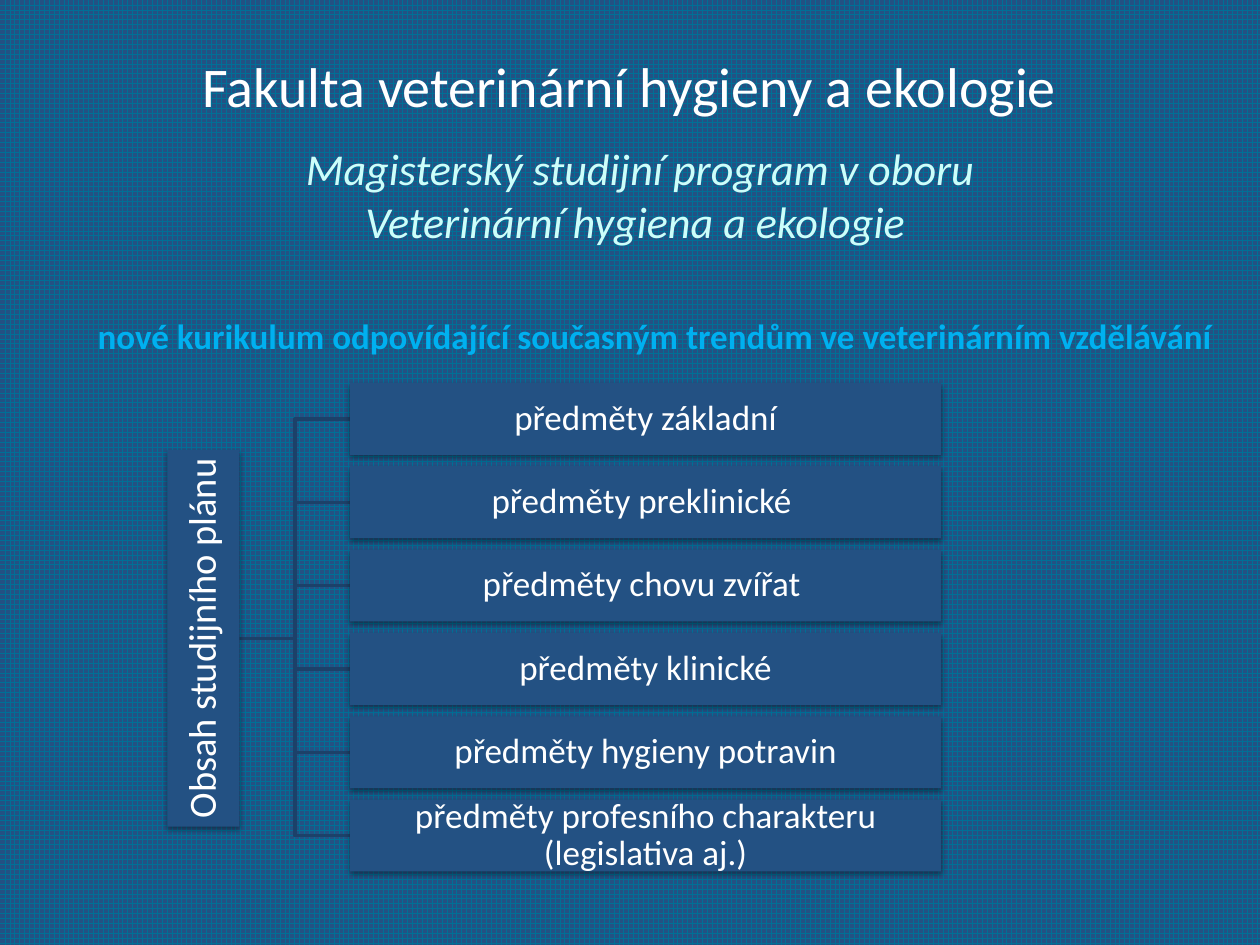
from dataclasses import dataclass

from lxml import etree
from pptx import Presentation
from pptx.dml.color import RGBColor
from pptx.enum.dml import MSO_PATTERN
from pptx.enum.shapes import MSO_SHAPE
from pptx.enum.text import MSO_ANCHOR, PP_ALIGN
from pptx.oxml.ns import qn
from pptx.util import Cm, Pt

LARGE_GRID = MSO_PATTERN.LARGE_GRID
RECTANGLE = MSO_SHAPE.RECTANGLE
TOP, MIDDLE = MSO_ANCHOR.TOP, MSO_ANCHOR.MIDDLE
CENTER = PP_ALIGN.CENTER

HEADING = "Fakulta veterinární hygieny a ekologie"
TITLE = "Magisterský studijní program v oboru\vVeterinární hygiena a ekologie "
SUBHEADING = "nové kurikulum odpovídající současným trendům ve veterinárním vzdělávání"
ROOT = "Obsah studijního plánu"
SUBJECTS = [
    "předměty základní",
    "předměty preklinické ",
    "předměty chovu zvířat ",
    "předměty klinické",
    "předměty hygieny potravin",
    "předměty profesního charakteru (legislativa aj.)",
]

BOX_LEFT, BOX_TOP, BOX_WIDTH, BOX_HEIGHT, BOX_PITCH = 7.06, 7.72, 11.91, 1.45, 1.68
ROOT_CENTER_X, ROOT_CENTER_Y, ROOT_LENGTH = 4.1, 12.87, 7.59


@dataclass(frozen=True)
class Theme:
    """Colours, font and type sizes of the slide."""

    font: str = "Calibri"
    box: RGBColor = RGBColor(0x23, 0x51, 0x83)
    grid: RGBColor = RGBColor(0x00, 0x6F, 0x96)
    branch: RGBColor = RGBColor(0x1C, 0x41, 0x69)
    white: RGBColor = RGBColor(0xFF, 0xFF, 0xFF)
    mint: RGBColor = RGBColor(0xCC, 0xFE, 0xFA)
    sky: RGBColor = RGBColor(0x00, 0xB0, 0xF0)
    heading: float = 32
    title: float = 25.2
    root: float = 22
    body: float = 20


THEME = Theme()


def place(shape, left, top, width, height):
    shape.left, shape.top = Cm(left), Cm(top)
    shape.width, shape.height = Cm(width), Cm(height)


def write(shape, text, size, color, anchor=TOP, bold=False, italic=False):
    frame = shape.text_frame
    frame.text = text
    frame.word_wrap = True
    frame.vertical_anchor = anchor
    paragraph = frame.paragraphs[0]
    paragraph.alignment = CENTER
    font = paragraph.font
    font.name, font.size, font.color.rgb = THEME.font, Pt(size), color
    font.bold, font.italic = bold, italic
    return paragraph


def add_text(slide, box, *args, **options):
    textbox = slide.shapes.add_textbox(*map(Cm, box))
    return write(textbox, *args, **options)


def add_shadow(shape):
    shape.shadow.inherit = False
    effects = shape._element.spPr.find(qn("a:effectLst"))
    shadow = etree.SubElement(effects, qn("a:outerShdw"), blurRad=str(Pt(3.1)),
                              dist=str(Pt(1.6)), dir="5400000", rotWithShape="0")
    color = etree.SubElement(shadow, qn("a:srgbClr"), val="000000")
    etree.SubElement(color, qn("a:alpha"), val="38000")


def add_box(slide, left, top, width, text, size, margin):
    box = slide.shapes.add_shape(RECTANGLE, Cm(left), Cm(top), Cm(width), Cm(BOX_HEIGHT))
    box.fill.solid()
    box.fill.fore_color.rgb = THEME.box
    box.line.fill.background()
    add_shadow(box)
    write(box, text, size, THEME.white, MIDDLE).line_spacing = 0.9
    frame = box.text_frame
    frame.margin_left = frame.margin_right = Cm(margin)
    frame.margin_top = frame.margin_bottom = Cm(margin)
    return box


def add_branch(slide, start_x, end_x, start_y, end_y):
    middle_x = (start_x + end_x) / 2
    builder = slide.shapes.build_freeform(Cm(start_x), Cm(start_y))
    corners = [(middle_x, start_y), (middle_x, end_y), (end_x, end_y)]
    builder.add_line_segments([(Cm(x), Cm(y)) for x, y in corners], close=False)
    branch = builder.convert_to_shape()
    branch.fill.background()
    branch.line.color.rgb = THEME.branch
    branch.line.width = Pt(2)
    branch.shadow.inherit = False


def add_tree(slide):
    tops = [BOX_TOP + index * BOX_PITCH for index in range(len(SUBJECTS))]
    for top in tops:
        add_branch(slide, ROOT_CENTER_X + BOX_HEIGHT / 2, BOX_LEFT,
                   ROOT_CENTER_Y, top + BOX_HEIGHT / 2)
    root = add_box(slide, ROOT_CENTER_X - ROOT_LENGTH / 2, ROOT_CENTER_Y - BOX_HEIGHT / 2,
                   ROOT_LENGTH, ROOT, THEME.root, 0.05)
    root.rotation = 270
    for top, subject in zip(tops, SUBJECTS):
        add_box(slide, BOX_LEFT, top, BOX_WIDTH, subject, THEME.body, 0.03)


def main():
    """Build the slide on the contents of the study plan."""
    presentation = Presentation()
    presentation.slide_width, presentation.slide_height = Cm(25.4), Cm(19.05)
    slide = presentation.slides.add_slide(presentation.slide_layouts[5])
    background = slide.background.fill
    background.patterned()
    background.pattern = LARGE_GRID
    background.fore_color.rgb, background.back_color.rgb = THEME.grid, THEME.box

    title = slide.shapes.title
    place(title, 1.5, 2.72, 22.81, 2.39)
    write(title, TITLE, THEME.title, THEME.mint, MIDDLE, italic=True).space_before = Pt(6.5)
    add_text(slide, (1.9, 0.91, 21.59, 2.57), HEADING, THEME.heading, THEME.white)
    add_tree(slide)
    add_text(slide, (1.4, 6.22, 23.6, 1.12), SUBHEADING, THEME.body, THEME.sky, bold=True)
    presentation.save("out.pptx")


if __name__ == "__main__":
    main()
